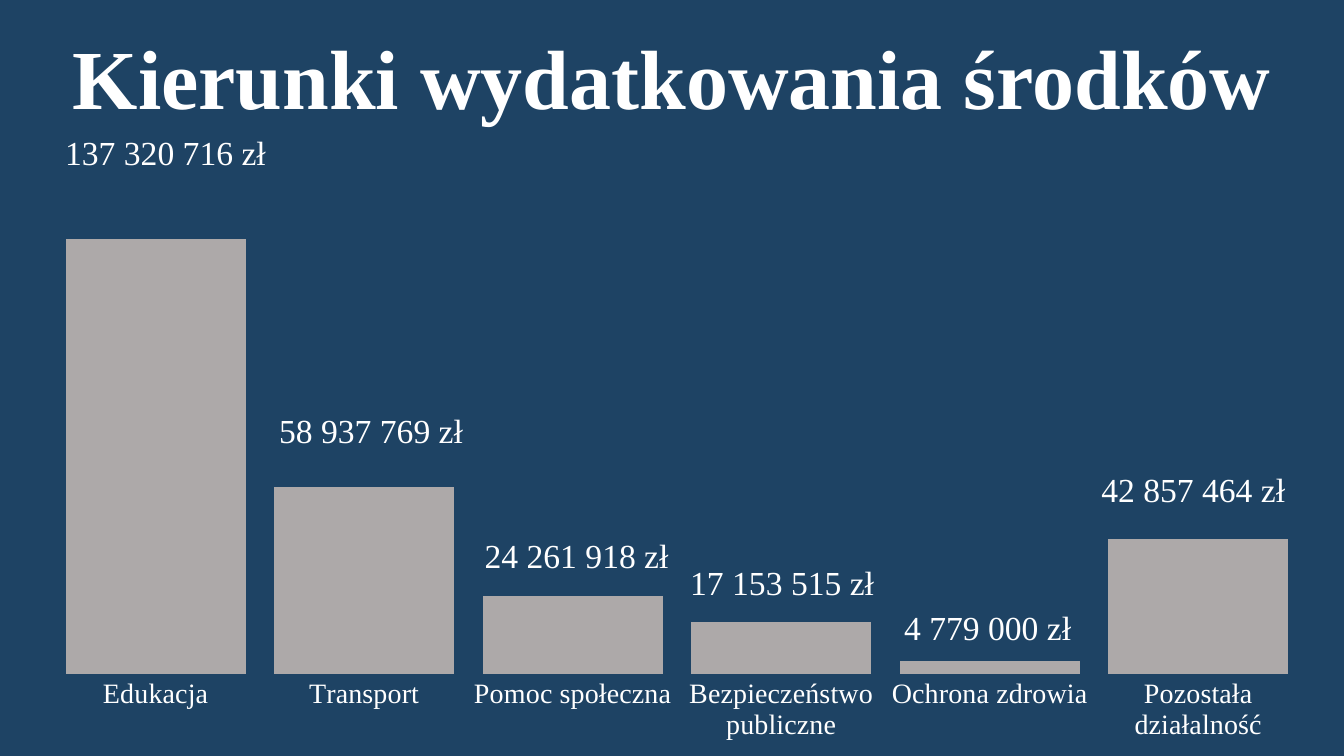
from lxml.etree import SubElement
from pptx import Presentation
from pptx.chart.data import CategoryChartData
from pptx.dml.color import RGBColor
from pptx.enum.chart import XL_CHART_TYPE as ChartType, XL_TICK_MARK as Tick
from pptx.enum.text import MSO_ANCHOR as Anchor, PP_ALIGN as Align
from pptx.oxml.ns import qn
from pptx.util import Cm, Pt

TITLE = "Kierunki wydatkowania środków"
SERIES = "Wydatki"
SPENDING = [
    # category, bar value, amount, label top, label width, label height
    ("Edukacja", 100, "137 320 716 zł", 3.56, 6.25, 0.69),
    ("Transport", 43, "58 937 769 zł", 10.54, 6.25, 0.71),
    ("Pomoc społeczna", 18, "24 261 918 zł", 13.67, 6.58, 0.76),
    ("Bezpieczeństwo publiczne", 12, "17 153 515 zł", 14.45, 5.72, 0.58),
    ("Ochrona zdrowia", 3, "4 779 000 zł", 15.54, 5.44, 0.64),
    ("Pozostała działalność", 31, "42 857 464 zł", 12.01, 6.58, 0.74),
]
COLORS = {"background": "1E4364", "bar": "ADA9A9", "text": "FFFFFF"}
FONT = "Times New Roman"
PLOT = {"x": 0.027, "y": 0.194, "w": 0.881, "h": 0.669}
FIRST_CENTER, PITCH = 4.17, 5.18
AXIS_MAX = 116.5


def color(name):
    return RGBColor.from_string(COLORS[name])


def style_font(font, size, bold=False):
    font.name, font.size, font.bold = FONT, Pt(size), bold
    font.color.rgb = color("text")


def add_text(s, text, box, size, bold=False, anchor=Anchor.MIDDLE, inset=(0.43, 0), before=0):
    tf = s.shapes.add_textbox(*map(Cm, box)).text_frame
    tf.word_wrap = True
    tf.vertical_anchor = anchor
    tf.margin_left = tf.margin_right = Cm(inset[0])
    tf.margin_top = tf.margin_bottom = Cm(inset[1])
    tf.text = text
    p = tf.paragraphs[0]
    p.alignment, p.line_spacing, p.space_before = Align.CENTER, 0.9, Pt(before)
    style_font(p.runs[0].font, size, bold)


def set_plot_layout(chart):
    plot_area = chart.plots[0]._element.getparent()
    layout = plot_area.find(qn("c:layout"))
    if layout is None:
        layout = SubElement(plot_area, qn("c:layout"))
        plot_area.insert(0, layout)
    manual = SubElement(layout, qn("c:manualLayout"))
    settings = {"layoutTarget": "inner", "xMode": "edge", "yMode": "edge", **PLOT}
    for tag, value in settings.items():
        SubElement(manual, qn(f"c:{tag}")).set("val", str(value))


def add_spending_chart(s):
    data = CategoryChartData()
    data.categories = [row[0] for row in SPENDING]
    data.add_series(SERIES, [row[1] for row in SPENDING])
    box = map(Cm, (0.33, 0.51, 35.79, 19.1))
    chart = s.shapes.add_chart(ChartType.COLUMN_CLUSTERED, *box, data).chart
    chart.has_legend = chart.has_title = False
    style_font(chart.font, 12, True)

    plot = chart.plots[0]
    plot.gap_width = 16
    plot.vary_by_categories = False
    fill = plot.series[0].format.fill
    fill.solid()
    fill.fore_color.rgb = color("bar")

    cat_axis, val_axis = chart.category_axis, chart.value_axis
    style_font(cat_axis.tick_labels.font, 20)
    cat_axis.major_tick_mark = Tick.NONE
    cat_axis.format.line.fill.background()
    val_axis.minimum_scale, val_axis.maximum_scale = 0, AXIS_MAX
    val_axis.has_major_gridlines = False
    val_axis.visible = False
    set_plot_layout(chart)


def main():
    """Build the spending slide and save it."""
    prs = Presentation()
    prs.slide_width, prs.slide_height = Cm(33.87), Cm(19.05)
    s = prs.slides.add_slide(prs.slide_layouts[6])
    s.background.fill.solid()
    s.background.fill.fore_color.rgb = color("background")

    add_text(s, TITLE, (0.74, 0.79, 32.38, 2.74), 60, True, Anchor.TOP, (0.25, 0.13), 10)
    add_spending_chart(s)
    for i, (_, _, amount, top, width, height) in enumerate(SPENDING):
        left = FIRST_CENTER + i * PITCH - width / 2
        add_text(s, amount, (left, top, width, height), 24)

    prs.save("out.pptx")


if __name__ == "__main__":
    main()
